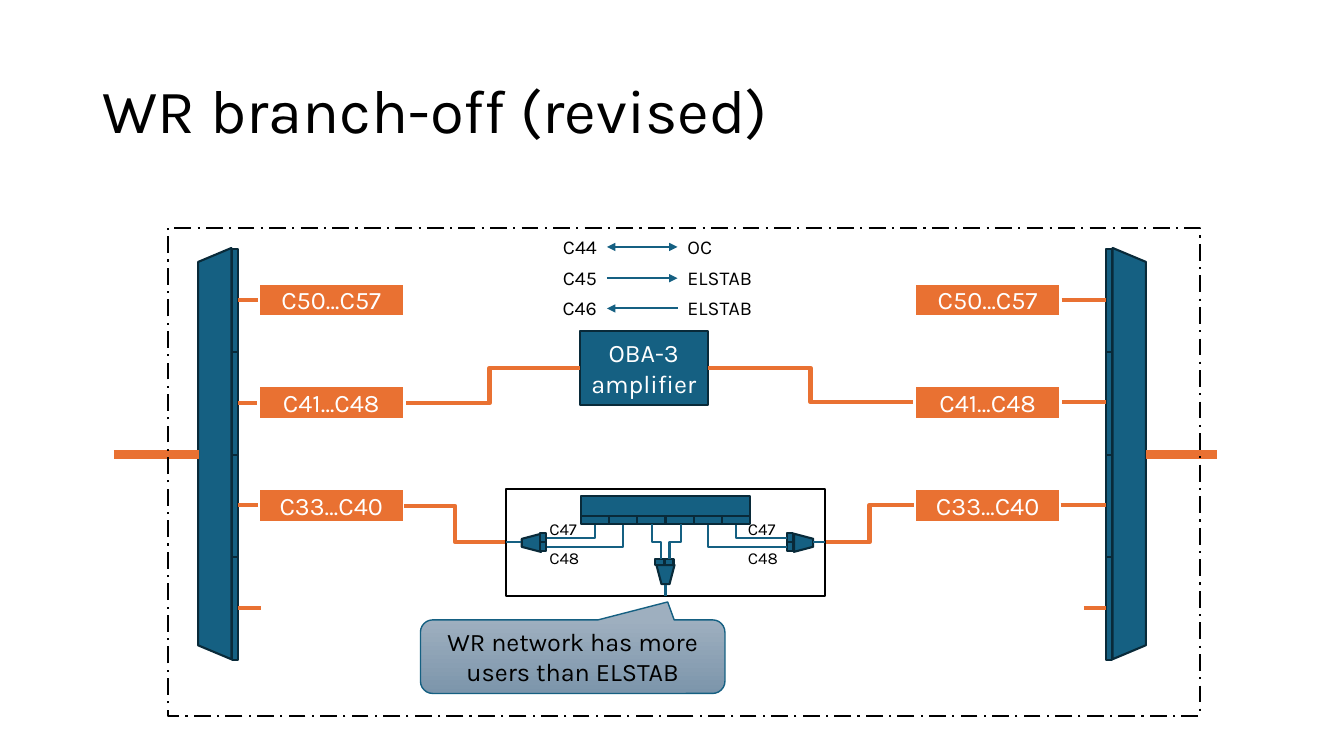
from lxml.etree import SubElement
from pptx import Presentation
from pptx.dml.color import RGBColor
from pptx.enum.dml import MSO_LINE
from pptx.enum.shapes import MSO_CONNECTOR, MSO_SHAPE
from pptx.enum.text import MSO_ANCHOR, PP_ALIGN
from pptx.oxml.ns import qn
from pptx.util import Inches, Pt

BLUE = RGBColor(0x15, 0x60, 0x82)
NAVY = RGBColor(0x09, 0x2A, 0x39)
ORANGE = RGBColor(0xE9, 0x71, 0x32)
MIST = RGBColor(0x9E, 0xAF, 0xBF)
STEEL = RGBColor(0x7C, 0x95, 0xAB)
WHITE = RGBColor(0xFF, 0xFF, 0xFF)
BLACK = RGBColor(0, 0, 0)


def write(frame, text, size, color, align, anchor=MSO_ANCHOR.MIDDLE):
    """Set one paragraph of text in the slide's font."""
    frame.text = text
    frame.vertical_anchor = anchor
    paragraph = frame.paragraphs[0]
    paragraph.alignment = align
    for run in paragraph.runs:
        run.font.size = Pt(size)
        run.font.name = "Karla"
        run.font.color.rgb = color
    return paragraph


def label(slide, box, text, size, align=PP_ALIGN.LEFT, anchor=MSO_ANCHOR.TOP, wrap=True):
    """Add free-standing black text."""
    frame = slide.shapes.add_textbox(*map(Inches, box)).text_frame
    frame.word_wrap = wrap
    return write(frame, text, size, BLACK, align, anchor)


def block(slide, box, fill=BLUE, edge=NAVY, width=1.5, kind=MSO_SHAPE.RECTANGLE):
    """Add an outlined shape, hollow when fill is None."""
    shape = slide.shapes.add_shape(kind, *map(Inches, box))
    shape.shadow.inherit = False
    if fill is None:
        shape.fill.background()
    else:
        shape.fill.solid()
        shape.fill.fore_color.rgb = fill
    shape.line.color.rgb = edge
    shape.line.width = Pt(width)
    return shape


def funnel(slide, center, length, depth, rotation, slant):
    """Add a rotated trapezoid around its center."""
    x, y = center
    box = (x - length / 2, y - depth / 2, length, depth)
    shape = block(slide, box, kind=MSO_SHAPE.TRAPEZOID)
    shape.rotation = rotation
    shape.adjustments[0] = slant


def ports(slide, left, top, width, height, count, across=False):
    """Add a row or column of adjoining ports."""
    for index in range(count):
        x = left + index * width * across
        y = top + index * height * (not across)
        block(slide, (x, y, width, height))


def link(slide, start, end, color=BLUE, width=1.5, kind=MSO_CONNECTOR.STRAIGHT):
    """Add a connector without shadow."""
    line = slide.shapes.add_connector(kind, *map(Inches, (*start, *end)))
    line.line.color.rgb = color
    line.line.width = Pt(width)
    SubElement(line._element.spPr, qn("a:effectLst"))
    return line


def elbow(slide, start, end, color=ORANGE, width=3, bend=0.5):
    """Add a horizontal, vertical, horizontal connector."""
    line = link(slide, start, end, color, width, MSO_CONNECTOR.ELBOW)
    values = line._element.spPr.find(qn("a:prstGeom")).get_or_add_avLst()
    SubElement(values, qn("a:gd"), name="adj1", fmla=f"val {round(bend * 100000)}")
    return line


def corner(slide, start, end):
    """Add a thin connector with one bend, horizontal first."""
    line = link(slide, start, end, kind=MSO_CONNECTOR.ELBOW)
    line._element.spPr.find(qn("a:prstGeom")).set("prst", "bentConnector2")


def upright_elbow(slide, start, end):
    """Add a thin vertical, horizontal, vertical connector."""
    middle_x, middle_y = (start[0] + end[0]) / 2, (start[1] + end[1]) / 2
    dx, dy = start[0] - middle_x, start[1] - middle_y
    line = elbow(slide, (middle_x - dy, middle_y + dx), (middle_x + dy, middle_y - dx), BLUE, 1.5)
    line._element.spPr.find(qn("a:xfrm")).set("rot", str(270 * 60000))


def channel_arrow(slide, y, channel, target, ends):
    """Add a channel, its arrow and its destination."""
    arrow = link(slide, (6.02, y), (6.72, y))
    outline = arrow.line._get_or_add_ln()
    for end in ends:
        SubElement(outline, qn(f"a:{end}"), type="triangle")
    label(slide, (6.72, y - 0.17, 0.96, 0.34), target, 14)
    label(slide, (5.36, y - 0.17, 0.66, 0.34), channel, 14, PP_ALIGN.RIGHT)


def band(slide, left, top, text):
    """Add an orange channel band."""
    shape = block(slide, (left, top, 1.45, 0.33), ORANGE, WHITE, 2)
    write(shape.text_frame, text, 18, WHITE, PP_ALIGN.CENTER)


def splitter_box(slide):
    """Add the inner box with its switch, splitters and wiring."""
    block(slide, (5.02, 4.85, 3.16, 1.06), None, BLACK)
    for x, port_left, rotation in ((5.27, 5.36, 270), (7.97, 7.81, 90)):
        funnel(slide, (x, 5.385), 0.18, 0.19, rotation, 0.28)
        ports(slide, port_left, 5.29, 0.06, 0.09, 2)
    for start, end in (
        ((5.43, 5.34), (5.9, 5.2)),
        ((5.43, 5.43), (6.18, 5.2)),
        ((7.81, 5.43), (7.02, 5.2)),
        ((7.81, 5.34), (7.3, 5.2)),
    ):
        corner(slide, start, end)
    link(slide, (5.02, 5.38), (5.17, 5.38))
    link(slide, (8.18, 5.38), (8.06, 5.38))
    for x in (5.35, 7.32):
        for y, channel in ((5.1, "C47"), (5.38, "C48")):
            label(slide, (x, y, 0.5, 0.3), channel, 12, wrap=False)
    block(slide, (5.76, 4.92, 1.68, 0.2))
    ports(slide, 5.76, 5.12, 0.28, 0.08, 6, across=True)
    funnel(slide, (6.6, 5.7), 0.18, 0.19, 180, 0.28)
    ports(slide, 6.5, 5.55, 0.09, 0.06, 2, across=True)
    upright_elbow(slide, (6.56, 5.55), (6.47, 5.2))
    upright_elbow(slide, (6.64, 5.55), (6.75, 5.2))
    link(slide, (6.6, 5.91), (6.6, 5.8))


def remark(slide):
    """Add the shaded callout below the inner box."""
    callout = block(slide, (4.17, 6.15, 3.02, 0.73), MIST, BLUE, 1,
                    MSO_SHAPE.ROUNDED_RECTANGULAR_CALLOUT)
    callout.adjustments[0] = 0.312
    callout.adjustments[1] = -0.744
    callout.fill.gradient()
    callout.fill.gradient_angle = 270
    for stop, color in zip(callout.fill.gradient_stops, (MIST, STEEL)):
        stop.color.rgb = color
    write(callout.text_frame, "WR network has more users than ELSTAB", 18, BLACK, PP_ALIGN.CENTER)


def main():
    """Build the branch-off slide."""
    deck = Presentation()
    deck.slide_width, deck.slide_height = Inches(13.33), Inches(7.5)
    slide = deck.slides.add_slide(deck.slide_layouts[6])
    title = label(slide, (0.92, 0.4, 11.5, 1.45), "WR branch-off (revised)", 44,
                  anchor=MSO_ANCHOR.MIDDLE)
    title.line_spacing = 0.9

    for x, port_left, rotation in ((2.13, 2.3, 270), (11.2, 10.97, 90)):
        funnel(slide, (x, 4.5), 4.08, 0.33, rotation, 0.419)
        ports(slide, port_left, 2.47, 0.06, 1.02, 4)
    amplifier = block(slide, (5.75, 3.28, 1.27, 0.74))
    write(amplifier.text_frame, "OBA-3 amplifier", 18, WHITE, PP_ALIGN.CENTER)

    elbow(slide, (2.36, 4), (5.75, 3.65), bend=0.736)
    elbow(slide, (7.02, 3.65), (10.97, 3.99), bend=0.258)
    for row, channels in enumerate(("C50…C57", "C41…C48", "C33…C40")):
        for left in (2.56, 9.07):
            band(slide, left, 2.81 + row * 1.02, channels)
    for y, left_end, right_end in ((2.98, 2.56, 10.53), (5.01, 2.56, 10.52), (6.03, 2.59, 10.75)):
        link(slide, (2.36, y), (left_end, y), ORANGE, 3)
        link(slide, (right_end, y), (10.97, y), ORANGE, 3)
    for start, end in ((1.13, 1.97), (11.37, 12.07)):
        link(slide, (start, 4.51), (end, 4.51), ORANGE, 6)
    site = block(slide, (1.67, 2.26, 10.23, 4.84), None, BLACK)
    site.line.dash_style = MSO_LINE.LONG_DASH_DOT

    channel_arrow(slide, 2.45, "C44", "OC", ("headEnd", "tailEnd"))
    channel_arrow(slide, 2.76, "C45", "ELSTAB", ("tailEnd",))
    channel_arrow(slide, 3.06, "C46", "ELSTAB", ("headEnd",))
    elbow(slide, (8.18, 5.38), (9.07, 5.01))
    elbow(slide, (4.01, 5.02), (5.02, 5.38))
    splitter_box(slide)
    remark(slide)
    deck.save("out.pptx")


if __name__ == "__main__":
    main()
